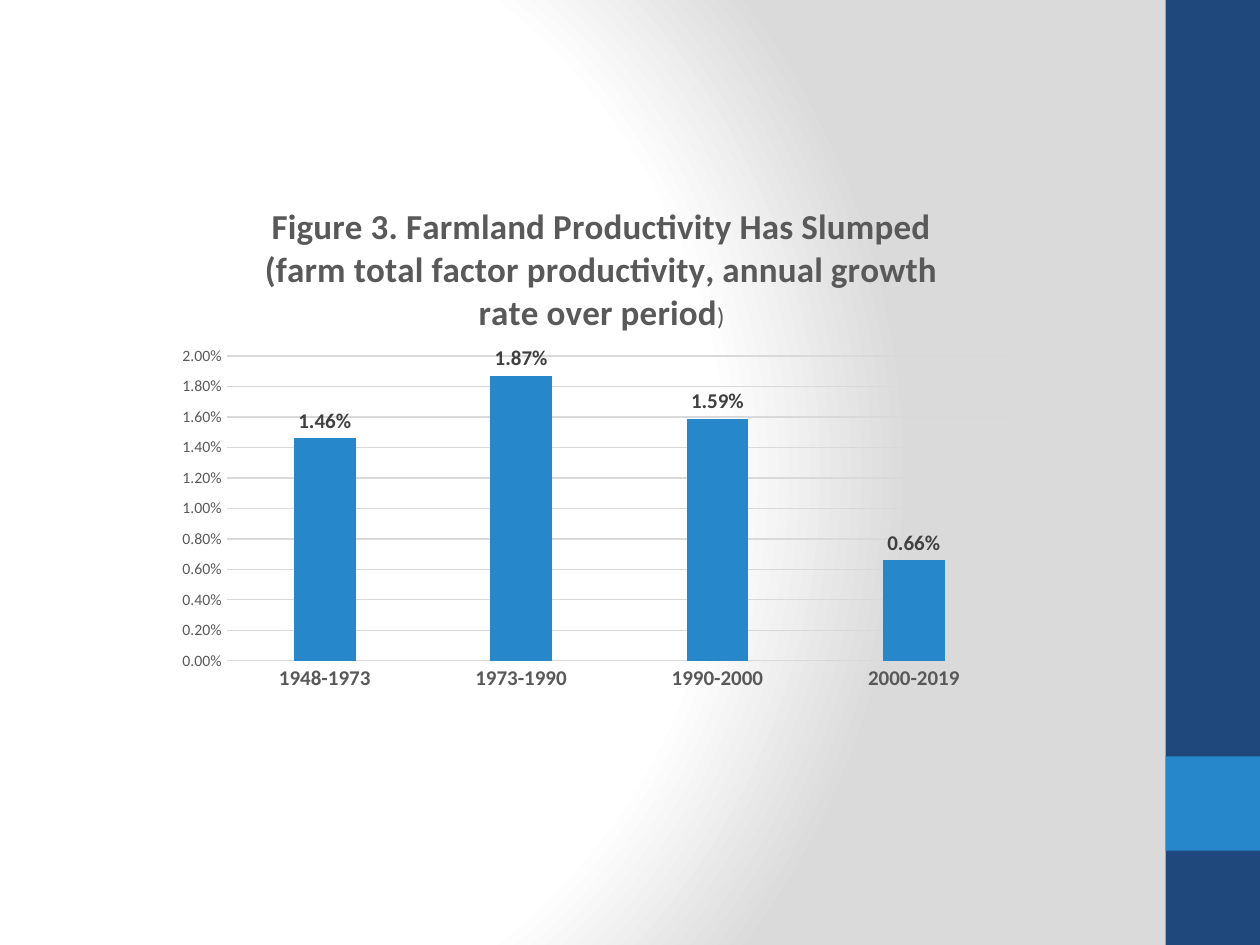
from pptx import Presentation
from pptx.chart.data import CategoryChartData
from pptx.dml.color import RGBColor
from pptx.enum.chart import XL_CHART_TYPE, XL_LABEL_POSITION, XL_TICK_MARK
from pptx.enum.shapes import MSO_SHAPE
from pptx.enum.text import PP_ALIGN
from pptx.oxml import parse_xml
from pptx.oxml.ns import nsdecls
from pptx.util import Cm, Pt

FONT = "Calibri"
NAVY, BLUE, GREY, PALE = "1F497D", "2688CB", "595959", "D9D9D9"
PERCENT = "0.00%"
GROWTH = {"1948-1973": 0.0146, "1973-1990": 0.0187,
          "1990-2000": 0.0159, "2000-2019": 0.0066}
TITLE = [
    [("Figure 3. Farmland Productivity Has Slumped", 20, True)],
    [("(farm total factor productivity, annual growth rate over period", 20, True),
     (")", 14, False)],
]


def color(value):
    return RGBColor.from_string(value)


def style_font(font, size, value, bold=False):
    font.name = FONT
    font.size = Pt(size)
    font.bold = bold
    font.color.rgb = color(value)


def style_line(line, value):
    line.color.rgb = color(value)
    line.width = Pt(0.75)


def manual_layout(**settings):
    """Layout element whose values are fractions of the chart area."""
    parts = "".join(f'<c:{name} val="{value}"/>' for name, value in settings.items())
    return parse_xml(f'<c:layout {nsdecls("c")}><c:manualLayout>{parts}'
                     '</c:manualLayout></c:layout>')


def add_background(slide):
    stops = "".join(
        f'<a:gs pos="{position * 1000}"><a:srgbClr val="{value}"/></a:gs>'
        for position, value in [(0, "FFFFFF"), (75, "FFFFFF"), (100, "DADADA")])
    background = parse_xml(
        f'<p:bg {nsdecls("p", "a")}><p:bgPr><a:gradFill rotWithShape="1">'
        f'<a:gsLst>{stops}</a:gsLst><a:path path="circle">'
        '<a:fillToRect l="20000" t="50000" r="100000" b="50000"/></a:path>'
        '</a:gradFill><a:effectLst/></p:bgPr></p:bg>')
    slide.background._cSld.insert(0, background)


def add_side_band(slide, left, top, width, height):
    # Full-height band with a square accent one square above its foot
    for offset, size, value in [(0, height, NAVY), (height - 2 * width, width, BLUE)]:
        shape = slide.shapes.add_shape(MSO_SHAPE.RECTANGLE, left, top + offset, width, size)
        shape.shadow.inherit = False
        shape.fill.solid()
        shape.fill.fore_color.rgb = color(value)
        shape.line.fill.background()


def add_title(chart):
    frame = chart.chart_title.text_frame
    for index, runs in enumerate(TITLE):
        paragraph = frame.paragraphs[0] if index == 0 else frame.add_paragraph()
        paragraph.alignment = PP_ALIGN.CENTER
        for text, size, bold in runs:
            run = paragraph.add_run()
            run.text = text
            style_font(run.font, size, GREY, bold)
    chart.chart_title.include_in_layout = False
    title = chart.chart_title._element
    for old in title.findall("{*}layout"):
        title.remove(old)
    title.find("{*}tx").addnext(
        manual_layout(xMode="edge", yMode="edge", x=0.11, y=0.04))


def add_growth_chart(slide, left, top, width, height):
    data = CategoryChartData(number_format=PERCENT)
    data.categories = list(GROWTH)
    data.add_series("Series 1", list(GROWTH.values()))
    chart = slide.shapes.add_chart(
        XL_CHART_TYPE.COLUMN_CLUSTERED, left, top, width, height, data).chart
    style_font(chart.font, 10, "000000")
    chart.has_legend = False
    add_title(chart)

    # Plot area
    plot_area = chart._chartSpace.chart.plotArea
    for old in plot_area.findall("{*}layout"):
        plot_area.remove(old)
    plot_area.insert(0, manual_layout(layoutTarget="inner", xMode="edge", yMode="edge",
                                      x=0.07, y=0.34, w=0.91, h=0.58))

    # Columns and their labels
    plot = chart.plots[0]
    plot.vary_by_categories = False
    plot.gap_width = 219
    plot.overlap = -27
    series = plot.series[0]
    series.format.fill.solid()
    series.format.fill.fore_color.rgb = color(BLUE)
    labels = series.data_labels
    labels.show_value = True
    labels.number_format = PERCENT
    labels.number_format_is_linked = False
    labels.position = XL_LABEL_POSITION.OUTSIDE_END
    style_font(labels.font, 12, "404040", True)

    # Axes
    for axis, size, bold in [(chart.category_axis, 12, True), (chart.value_axis, 9, False)]:
        axis.major_tick_mark = axis.minor_tick_mark = XL_TICK_MARK.NONE
        style_font(axis.tick_labels.font, size, GREY, bold)
    style_line(chart.category_axis.format.line, PALE)
    value_axis = chart.value_axis
    value_axis.minimum_scale, value_axis.maximum_scale = 0, 0.02
    value_axis.major_unit = 0.002
    value_axis.tick_labels.number_format = PERCENT
    value_axis.tick_labels.number_format_is_linked = False
    value_axis.format.line.fill.background()
    value_axis.has_major_gridlines = True
    style_line(value_axis.major_gridlines.format.line, PALE)


def main():
    presentation = Presentation()
    presentation.slide_width, presentation.slide_height = Cm(25.4), Cm(19.05)
    slide = presentation.slides.add_slide(presentation.slide_layouts[6])
    add_background(slide)
    add_side_band(slide, Cm(23.5), Cm(0), Cm(1.9), Cm(19.05))
    add_growth_chart(slide, Cm(3.35), Cm(3.58), Cm(17.4), Cm(10.59))
    presentation.save("out.pptx")


if __name__ == "__main__":
    main()
